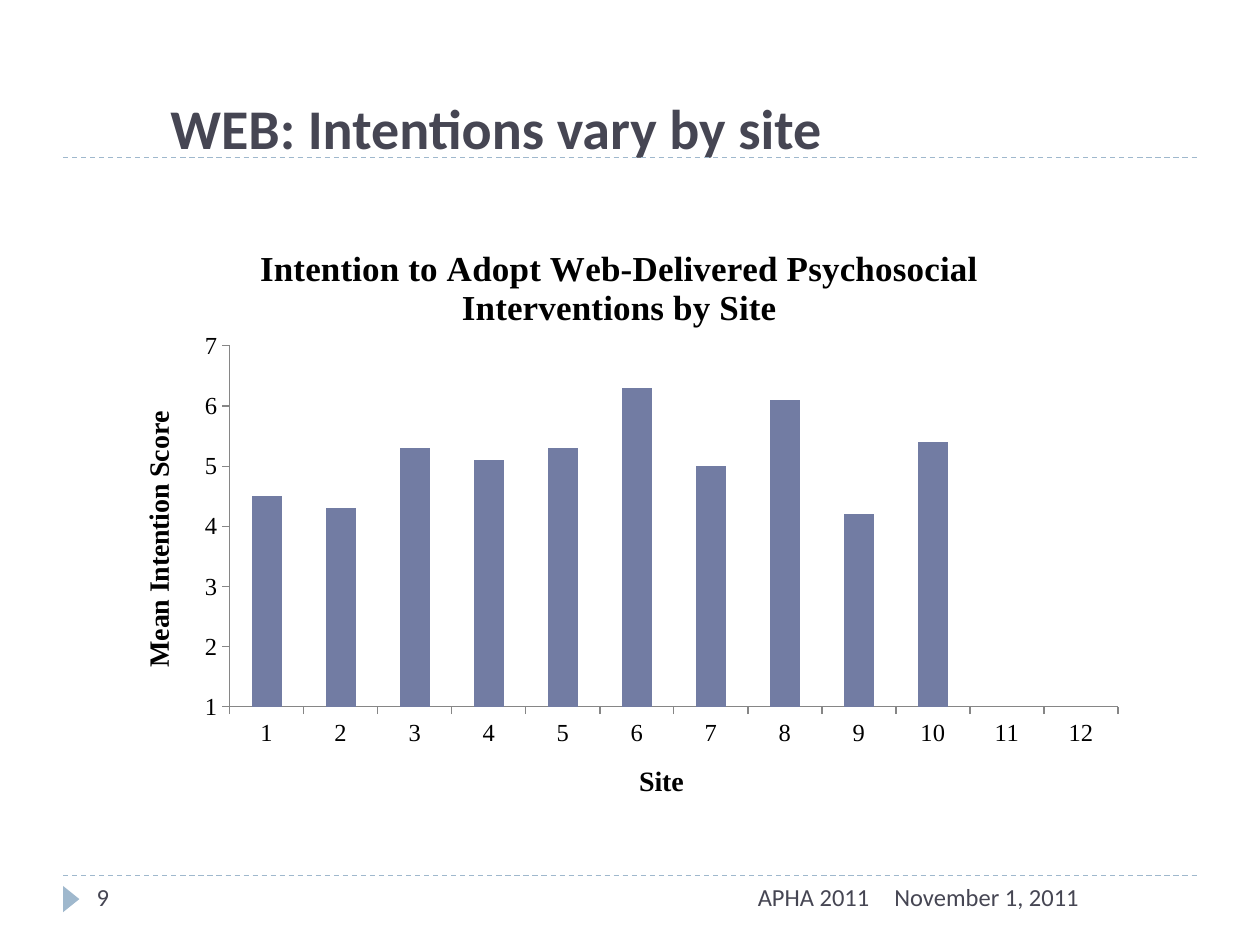
"""Builds the slide on how intentions to adopt web interventions vary by site."""
from dataclasses import dataclass

from lxml.etree import SubElement
from pptx import Presentation
from pptx.chart.data import CategoryChartData
from pptx.dml.color import RGBColor
from pptx.enum.chart import XL_CHART_TYPE, XL_TICK_MARK
from pptx.enum.dml import MSO_LINE
from pptx.enum.shapes import MSO_CONNECTOR, MSO_SHAPE
from pptx.enum.text import MSO_ANCHOR, PP_ALIGN
from pptx.oxml import parse_xml
from pptx.oxml.ns import nsdecls, qn
from pptx.util import Cm, Pt

INK = RGBColor(0x46, 0x46, 0x53)
BLACK = RGBColor(0, 0, 0)
RULE = RGBColor(0x9F, 0xB8, 0xCD)
BAR = RGBColor(0x72, 0x7C, 0xA3)
AXIS = RGBColor(0x86, 0x86, 0x86)
SANS = "Calibri"
SERIF = "Times New Roman"
SCORES = (4.5, 4.3, 5.3, 5.1, 5.3, 6.3, 5, 6.1, 4.2, 5.4, None, None)
PLOT_AREA = {"x": 0.129, "y": 0.213, "w": 0.846, "h": 0.614}


@dataclass
class FooterItem:
    text: str
    left: float
    width: float
    alignment: PP_ALIGN = PP_ALIGN.LEFT


FOOTER = (
    FooterItem("November 1, 2011", 17.78, 6.35),
    FooterItem("9", 1.7, 5.5),
    FooterItem("APHA 2011", 8.05, 9.73, PP_ALIGN.RIGHT),
)


def style_font(font, name: str, size: float, color: RGBColor, bold: bool = False) -> None:
    font.name = name
    font.size = Pt(size)
    font.bold = bold
    font.color.rgb = color


def add_rule(slide, top: float) -> None:
    rule = slide.shapes.add_connector(
        MSO_CONNECTOR.STRAIGHT, Cm(1.27), Cm(top), Cm(24.13), Cm(top))
    rule.line.color.rgb = RULE
    rule.line.width = Pt(0.75)
    rule.line.dash_style = MSO_LINE.DASH
    SubElement(rule._element.spPr, qn("a:effectLst"))


def add_marker(slide) -> None:
    marker = slide.shapes.add_shape(
        MSO_SHAPE.ISOSCELES_TRIANGLE, Cm(1.17), Cm(17.96), Cm(0.53), Cm(0.33))
    marker.rotation = 90
    marker.shadow.inherit = False
    marker.fill.solid()
    marker.fill.fore_color.rgb = RULE
    marker.line.fill.background()


def add_title(slide, text: str) -> None:
    title = slide.shapes.title
    title.left, title.top, title.width, title.height = Cm(3.18), Cm(1.47), Cm(19.25), Cm(1.9)
    title.text_frame.vertical_anchor = MSO_ANCHOR.BOTTOM
    para = title.text_frame.paragraphs[0]
    para.alignment = PP_ALIGN.LEFT
    span = para.add_run()
    span.text = text
    style_font(span.font, SANS, 32, INK, True)


def add_footer_item(slide, item: FooterItem) -> None:
    box = slide.shapes.add_textbox(Cm(item.left), Cm(17.65), Cm(item.width), Cm(1.02))
    box.text_frame.word_wrap = True
    para = box.text_frame.paragraphs[0]
    para.alignment = item.alignment
    span = para.add_run()
    span.text = item.text
    style_font(span.font, SANS, 14, INK)


def add_heading(owner, text: str, size: float) -> None:
    span = owner.text_frame.paragraphs[0].add_run()
    span.text = text
    style_font(span.font, SERIF, size, BLACK, True)


def format_axis(axis, title: str) -> None:
    axis.has_major_gridlines = False
    axis.major_tick_mark = XL_TICK_MARK.OUTSIDE
    axis.minor_tick_mark = XL_TICK_MARK.NONE
    axis.format.line.color.rgb = AXIS
    axis.format.line.width = Pt(0.75)
    style_font(axis.tick_labels.font, SERIF, 14, BLACK)
    add_heading(axis.axis_title, title, 16)


def place_plot_area(chart) -> None:
    plot_area = chart._chartSpace.chart.plotArea
    for layout in plot_area.findall(qn("c:layout")):
        plot_area.remove(layout)
    sizes = "".join(f'<c:{key} val="{value}"/>' for key, value in PLOT_AREA.items())
    plot_area.insert(0, parse_xml(
        f'<c:layout {nsdecls("c")}><c:manualLayout><c:layoutTarget val="inner"/>'
        f'<c:xMode val="edge"/><c:yMode val="edge"/>{sizes}</c:manualLayout></c:layout>'))


def add_score_chart(slide) -> None:
    data = CategoryChartData()
    data.categories = [str(site) for site in range(1, len(SCORES) + 1)]
    data.add_series("Series 1", SCORES)
    chart = slide.shapes.add_chart(
        XL_CHART_TYPE.COLUMN_CLUSTERED, Cm(1.9), Cm(4.45), Cm(21.17), Cm(11.85), data).chart
    style_font(chart.font, SANS, 10, BLACK)
    chart.has_legend = False
    add_heading(chart.chart_title,
                "Intention to Adopt Web-Delivered Psychosocial Interventions by Site", 20)
    chart.chart_title._element.find(qn("c:overlay")).set("val", "1")
    format_axis(chart.category_axis, "Site")
    format_axis(chart.value_axis, "Mean Intention Score")
    chart.value_axis.minimum_scale = 1
    chart.value_axis.maximum_scale = 7
    chart.value_axis.major_unit = 1
    plot = chart.plots[0]
    plot.vary_by_categories = False
    plot.gap_width = 150
    fill = plot.series[0].format.fill
    fill.solid()
    fill.fore_color.rgb = BAR
    place_plot_area(chart)


def main() -> None:
    deck = Presentation()
    deck.slide_width, deck.slide_height = Cm(25.4), Cm(19.05)
    page = deck.slides.add_slide(deck.slide_layouts[5])
    for top in (17.65, 3.18):
        add_rule(page, top)
    add_marker(page)
    add_title(page, "WEB: Intentions vary by site")
    add_score_chart(page)
    for item in FOOTER:
        add_footer_item(page, item)
    deck.save("out.pptx")


if __name__ == "__main__":
    main()
